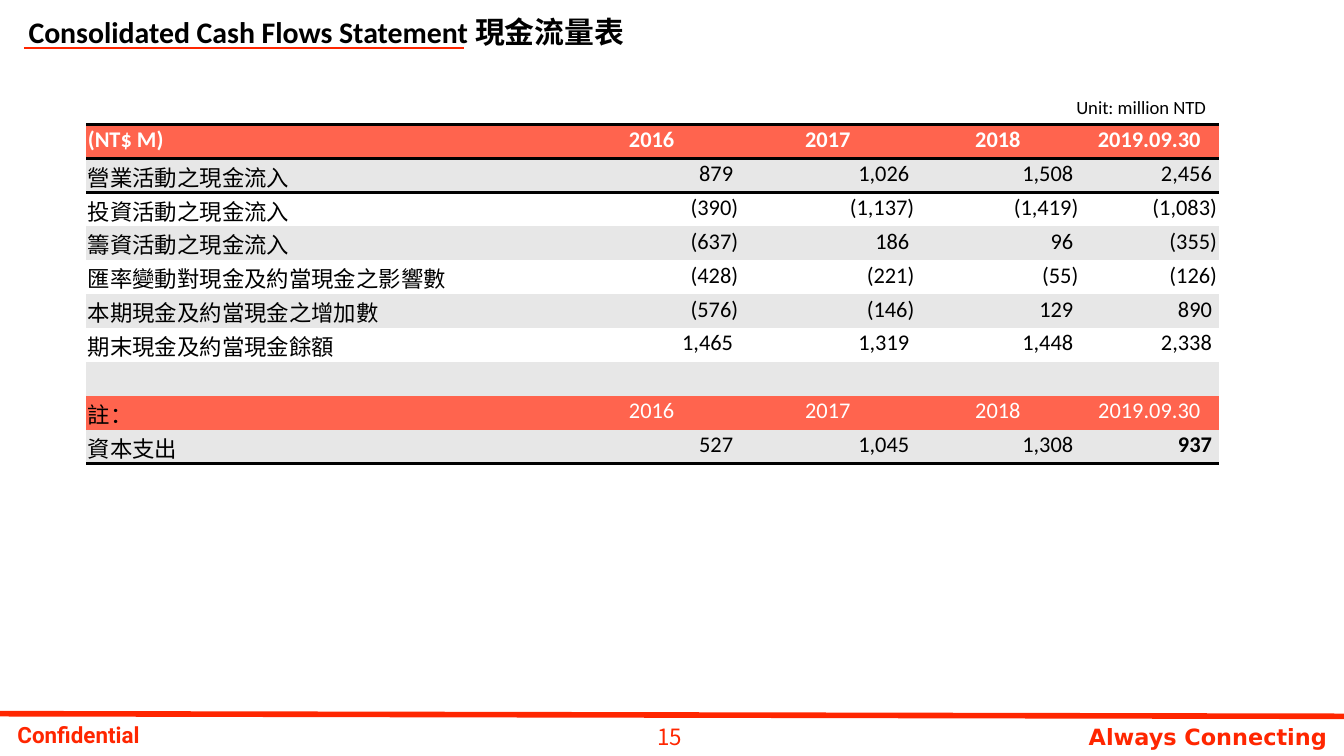
from dataclasses import dataclass

from lxml.etree import SubElement
from pptx import Presentation
from pptx.dml.color import RGBColor
from pptx.enum.shapes import MSO_CONNECTOR as Connector
from pptx.enum.text import MSO_ANCHOR as Anchor, MSO_AUTO_SIZE as AutoSize, PP_ALIGN as Align
from pptx.oxml.ns import qn
from pptx.util import Cm, Pt

# Content
TITLE = "Consolidated Cash Flows Statement 現金流量表"
UNIT = "Unit: million NTD"
CONFIDENTIAL, PAGE, SLOGAN = "Confidential", "15", "Always Connecting"
PERIODS = ("2016", "2017", "2018", "2019.09.30")

# Row kind, label, values; the space after a positive number leaves room for a bracket
ROWS = [
    ("head", "(NT$ M)", PERIODS),
    ("body", "營業活動之現金流入", ("879 ", "1,026 ", "1,508 ", "2,456 ")),
    ("body", "投資活動之現金流入", ("(390)", "(1,137)", "(1,419)", "(1,083)")),
    ("body", "籌資活動之現金流入", ("(637)", "186 ", "96 ", "(355)")),
    ("body", "匯率變動對現金及約當現金之影響數", ("(428)", "(221)", "(55)", "(126)")),
    ("body", "本期現金及約當現金之增加數", ("(576)", "(146)", "129 ", "890 ")),
    ("body", "期末現金及約當現金餘額", ("1,465 ", "1,319 ", "1,448 ", "2,338 ")),
    ("body", "", ("", "", "", "")),
    ("note", "註：", PERIODS),
    ("body", "資本支出", ("527 ", "1,045 ", "1,308 ", "937 ")),
]
BOLD_VALUES = {"937 "}
COLUMN_WIDTHS = (9.02, 3.33, 3.33, 3.1, 2.62)
ROW_HEIGHT = 0.64


@dataclass(frozen=True)
class Theme:
    red: str = "FF2600"
    coral: str = "FF644E"
    band: str = "E7E7E7"
    white: str = "FFFFFF"
    black: str = "000000"
    latin: str = "Calibri"
    chinese: str = "Noto Sans CJK TC"
    footer: str = "Roboto"
    slogan: str = "DejaVu Sans"
    title_size: int = 16
    text_size: int = 12
    unit_size: int = 10


THEME = Theme()


def format_runs(paragraph, font, size, color, bold=False):
    for run in paragraph.runs:
        run.font.name = font
        run.font.size = Pt(size)
        run.font.bold = bold
        run.font.color.rgb = RGBColor.from_string(color)
        SubElement(run.font._element, qn("a:ea"), typeface=THEME.chinese)


def add_text(slide, box, text, font, size, color, bold=False, align=Align.LEFT,
             inset=0.13, anchor=Anchor.TOP, wrap=True, auto_size=AutoSize.SHAPE_TO_FIT_TEXT):
    shape = slide.shapes.add_textbox(*map(Cm, box))
    frame = shape.text_frame
    frame.text = text
    frame.word_wrap = wrap
    frame.auto_size = auto_size
    frame.vertical_anchor = anchor
    frame.margin_left = frame.margin_right = Cm(inset)
    frame.margin_top = frame.margin_bottom = Cm(0.13)
    frame.paragraphs[0].alignment = align
    format_runs(frame.paragraphs[0], font, size, color, bold)


def add_line(slide, ends, width):
    line = slide.shapes.add_connector(Connector.STRAIGHT, *map(Cm, ends))
    line.line.color.rgb = RGBColor.from_string(THEME.red)
    line.line.width = Pt(width)
    SubElement(line._element.spPr, qn("a:effectLst"))


def add_border(cell, side):
    line = SubElement(cell._tc.get_or_add_tcPr(), qn(f"a:ln{side}"), w=str(Pt(2)))
    fill = SubElement(line, qn("a:solidFill"))
    SubElement(fill, qn("a:srgbClr"), val=THEME.black)


def fill_cell(cell, text, font, color, fill, bold, align, bottom, borders):
    for side in borders:
        add_border(cell, side)
    cell.fill.solid()
    cell.fill.fore_color.rgb = RGBColor.from_string(fill)
    cell.vertical_anchor = Anchor.MIDDLE
    cell.margin_left = cell.margin_right = cell.margin_top = Cm(0.03)
    cell.margin_bottom = Cm(bottom)
    paragraph = cell.text_frame.paragraphs[0]
    paragraph.alignment = align
    if text:
        paragraph.text = text
        format_runs(paragraph, font, THEME.text_size, color, bold)
    else:
        SubElement(paragraph._p, qn("a:endParaRPr"), sz=str(THEME.text_size * 100))


def add_cash_flow_table(slide):
    frame = slide.shapes.add_table(
        len(ROWS), len(COLUMN_WIDTHS), Cm(1.63), Cm(2.36),
        Cm(sum(COLUMN_WIDTHS)), Cm(ROW_HEIGHT * len(ROWS)))
    table = frame.table
    table.first_row = table.horz_banding = False
    # Built-in style without grid lines
    table._tbl.tblPr.find(qn("a:tableStyleId")).text = "{2D5ABB26-0587-4C30-8999-92F81FD0307C}"
    for column, width in zip(table.columns, COLUMN_WIDTHS):
        column.width = Cm(width)

    for row_index, (kind, label, values) in enumerate(ROWS):
        table.rows[row_index].height = Cm(ROW_HEIGHT)
        is_head, is_body = kind == "head", kind == "body"
        band = THEME.band if row_index % 2 else THEME.white
        fill = band if is_body else THEME.coral
        borders = "TB" if is_head else "T" if row_index == 1 else ""
        if row_index == len(ROWS) - 1:
            borders = "B"
        fill_cell(table.cell(row_index, 0), label,
                  THEME.latin if is_head else THEME.chinese,
                  THEME.white if is_head else THEME.black,
                  fill, is_head, Align.LEFT, 0.1 if is_head else 0, borders)
        for column_index, value in enumerate(values, start=1):
            fill_cell(table.cell(row_index, column_index), value, THEME.latin,
                      THEME.black if is_body else THEME.white, fill,
                      is_head or value in BOLD_VALUES,
                      Align.RIGHT if is_body else Align.CENTER, 0.1, borders)


def main():
    presentation = Presentation()
    presentation.slide_width, presentation.slide_height = Cm(25.4), Cm(14.29)
    slide = presentation.slides.add_slide(presentation.slide_layouts[6])

    # Footer
    add_text(slide, (0.2, 13.51, 3.18, 0.76), CONFIDENTIAL, THEME.footer,
             THEME.text_size, THEME.red, bold=True)
    add_line(slide, (0, 13.49, 25.4, 13.54), 3)
    add_text(slide, (20.29, 13.54, 5.08, 0.79), SLOGAN, THEME.slogan,
             THEME.text_size, THEME.red, bold=True, align=Align.CENTER)
    add_text(slide, (12.29, 13.54, 0.79, 0.81), PAGE, THEME.chinese,
             THEME.text_size, THEME.red, wrap=False)

    # Title
    add_line(slide, (0.45, 0.91, 8.77, 0.91), 0.75)
    add_text(slide, (0.41, -0.46, 13.06, 2.11), TITLE, THEME.latin, THEME.title_size,
             THEME.black, bold=True, anchor=Anchor.MIDDLE, auto_size=AutoSize.NONE)

    # Statement
    add_text(slide, (19.1, 1.68, 3.94, 0.69), UNIT, THEME.latin, THEME.unit_size,
             THEME.black, align=Align.RIGHT, inset=0.25)
    add_cash_flow_table(slide)

    presentation.save("out.pptx")


if __name__ == "__main__":
    main()
